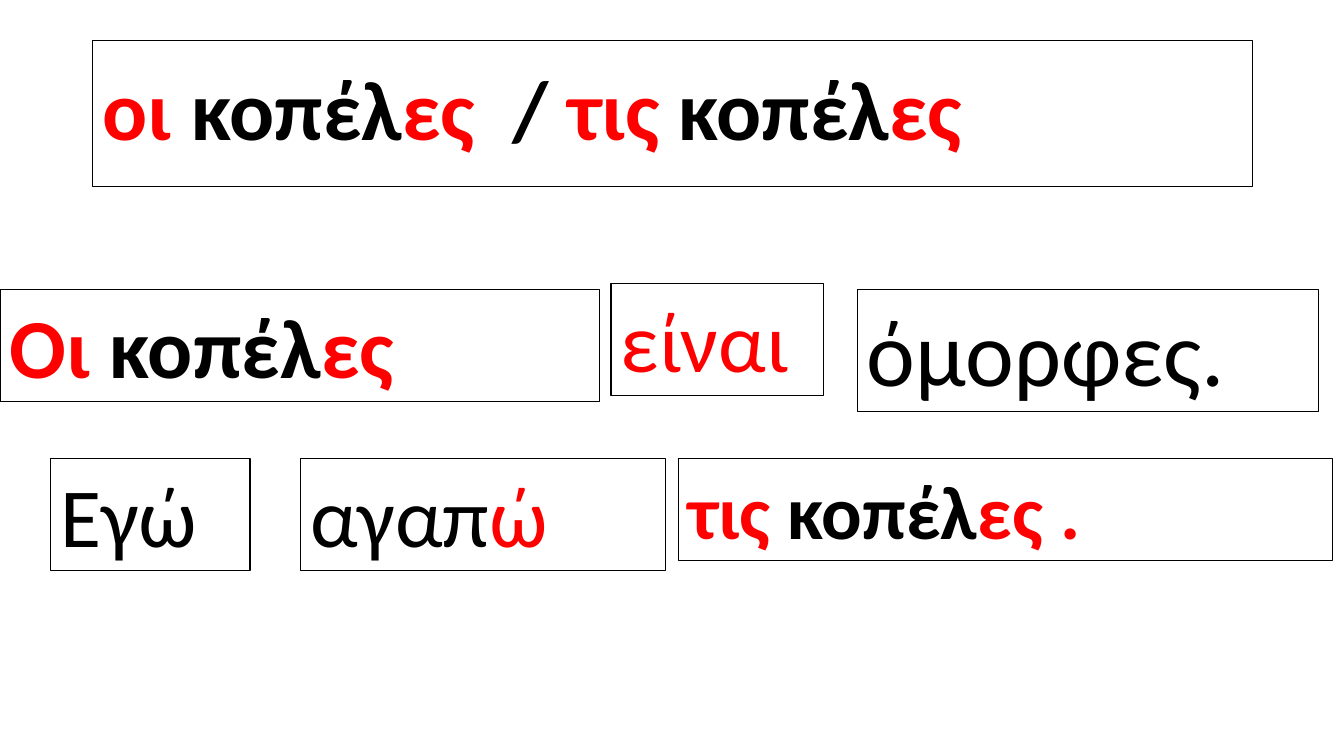
"""Build the Greek plural-noun slide with its boxed example sentences."""
from dataclasses import dataclass

from pptx import Presentation
from pptx import util as u
from pptx.dml.color import RGBColor
from pptx.enum import text

PX = 9144
FONT = "Calibri"
BLACK = RGBColor(0x00, 0x00, 0x00)
RED = RGBColor(0xFF, 0x00, 0x00)
WHITE = RGBColor(0xFF, 0xFF, 0xFF)

GIRLS = ((" κοπέλ", BLACK), ("ες", RED))


@dataclass(frozen=True)
class WordBox:
    left: int
    top: int
    width: int
    height: int
    runs: tuple[tuple[str, RGBColor], ...]
    size: int = 60
    bold: bool = False


TITLE = WordBox(
    92, 40, 1150, 145,
    (("οι", RED), *GIRLS, (" ", RED), (" / ", BLACK), ("τις", RED), *GIRLS),
    bold=True,
)
SENTENCE_BOXES = (
    WordBox(0, 287, 595, 111, (("Οι", RED), *GIRLS), bold=True),
    WordBox(606, 281, 211, 111, (("είναι", RED),)),
    WordBox(850, 287, 458, 121, (("όμορφες.", BLACK),), size=66),
    WordBox(50, 455, 198, 111, (("Εγώ", BLACK),)),
    WordBox(298, 455, 362, 111, (("αγαπ", BLACK), ("ώ", RED))),
    WordBox(673, 455, 649, 101, (("τις", RED), *GIRLS, (" .", RED)), size=54, bold=True),
)


def format_box(shape, box: WordBox) -> None:
    """Place a shape, outline it and write its coloured runs."""
    shape.left, shape.top = box.left * PX, box.top * PX
    shape.width, shape.height = box.width * PX, box.height * PX
    shape.line.color.rgb = BLACK
    shape.line.width = u.Pt(0.75)
    shape.text_frame.word_wrap = True
    paragraph = shape.text_frame.paragraphs[0]
    paragraph.alignment = text.PP_ALIGN.LEFT
    for wording, color in box.runs:
        run = paragraph.add_run()
        run.text = wording
        run.font.name = FONT
        run.font.size = u.Pt(box.size)
        run.font.bold = box.bold
        run.font.color.rgb = color


def add_title(slide, box: WordBox) -> None:
    """Format the title placeholder as a boxed heading."""
    title = slide.shapes.title
    format_box(title, box)
    title.text_frame.auto_size = text.MSO_AUTO_SIZE.NONE
    title.text_frame.vertical_anchor = text.MSO_ANCHOR.MIDDLE
    title.text_frame.paragraphs[0].line_spacing = 0.9


def add_word_box(slide, box: WordBox) -> None:
    """Add one boxed part of a sentence."""
    shape = slide.shapes.add_textbox(0, 0, PX, PX)
    format_box(shape, box)
    shape.text_frame.auto_size = text.MSO_AUTO_SIZE.SHAPE_TO_FIT_TEXT


def main() -> None:
    """Create and save the presentation."""
    presentation = Presentation()
    presentation.slide_width = 1333 * PX
    presentation.slide_height = 750 * PX
    slide = presentation.slides.add_slide(presentation.slide_layouts.get_by_name("Title Only"))
    slide.background.fill.solid()
    slide.background.fill.fore_color.rgb = WHITE
    add_title(slide, TITLE)
    for box in SENTENCE_BOXES:
        add_word_box(slide, box)
    presentation.save("out.pptx")


if __name__ == "__main__":
    main()
